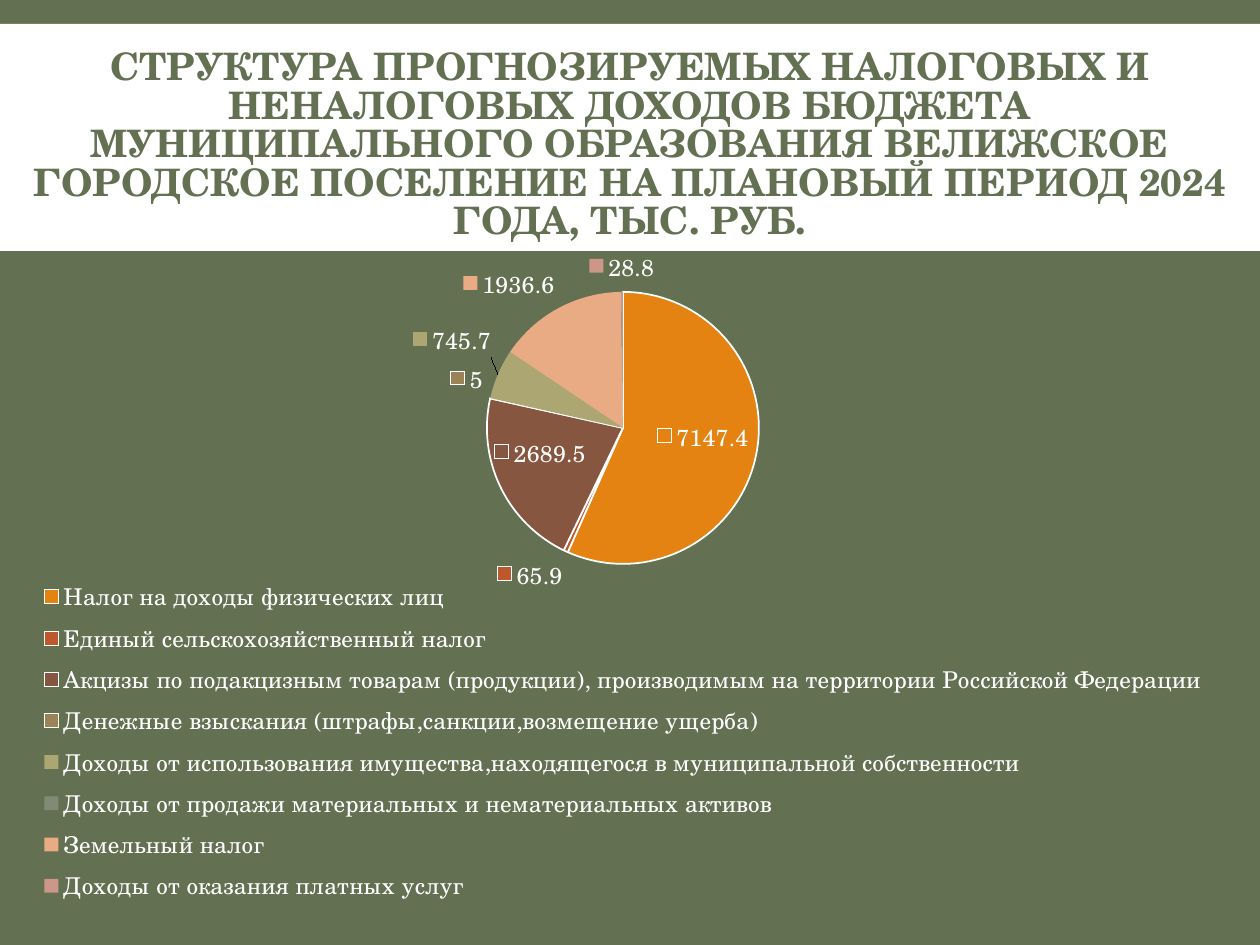
from lxml import etree
from pptx import Presentation
from pptx.chart.data import CategoryChartData
from pptx.dml.color import RGBColor
from pptx.enum.chart import XL_CHART_TYPE, XL_LABEL_POSITION, XL_LEGEND_POSITION
from pptx.enum.shapes import MSO_SHAPE
from pptx.enum.text import MSO_ANCHOR, PP_ALIGN
from pptx.oxml.ns import qn
from pptx.util import Pt

PIE = XL_CHART_TYPE.PIE
INSIDE = XL_LABEL_POSITION.INSIDE_END
OUTSIDE = XL_LABEL_POSITION.OUTSIDE_END
BOTTOM = XL_LEGEND_POSITION.BOTTOM
RECT = MSO_SHAPE.RECTANGLE
MIDDLE = MSO_ANCHOR.MIDDLE
CENTER = PP_ALIGN.CENTER
SCALE = 914400 // 126
GREEN, WHITE = "637052", "FFFFFF"
SMALL = 13.2
TITLE = (
    "СТРУКТУРА ПРОГНОЗИРУЕМЫХ НАЛОГОВЫХ И НЕНАЛОГОВЫХ ДОХОДОВ БЮДЖЕТА "
    "МУНИЦИПАЛЬНОГО ОБРАЗОВАНИЯ ВЕЛИЖСКОЕ ГОРОДСКОЕ ПОСЕЛЕНИЕ "
    "НА ПЛАНОВЫЙ ПЕРИОД 2024 ГОДА, ТЫС. РУБ."
)
INCOME = [
    ("Налог на доходы физических лиц", 7147.4, "E48312"),
    ("Единый сельскохозяйственный налог", 65.9, "BD582C"),
    ("Акцизы по подакцизным товарам (продукции), производимым на "
     "территории Российской Федерации", 2689.5, "865640"),
    ("Денежные взыскания (штрафы,санкции,возмещение ущерба)", 5, "9B8357"),
    ("Доходы от использования имущества,находящегося в муниципальной "
     "собственности", 745.7, "ABA672"),
    ("Доходы от продажи материальных и нематериальных активов", 0, "7F8B74"),
    ("Земельный налог", 1936.6, "E9AB84"),
    ("Доходы от оказания платных услуг", 28.8, "CC9689"),
]
SHIFTS = {2: (-0.01, -0.02), 4: (0, -0.02)}
OUTLINED = 4
LARGE = 2000


def color(code):
    """Turn a hex string into a colour."""
    return RGBColor.from_string(code)


def place(parent, after, items):
    """Give a chart part a manual layout in fractions of the chart."""
    for old in parent.findall(qn("c:layout")):
        parent.remove(old)
    layout = etree.Element(qn("c:layout"))
    manual = etree.SubElement(layout, qn("c:manualLayout"))
    for tag, val in items:
        etree.SubElement(manual, qn(f"c:{tag}")).set("val", str(val))
    if after is None:
        parent.insert(0, layout)
    else:
        after.addnext(layout)


def edges(*box):
    """List the layout items of a box measured from the chart's edge."""
    return [("xMode", "edge"), ("yMode", "edge"), *zip("xywh", box)]


class Deck:
    """Hold the style and the current slide."""

    def __init__(self, face):
        """Start a one-slide deck with a plain background."""
        self.face = face
        self.deck = Presentation()
        self.deck.slide_width = 1260 * SCALE
        self.deck.slide_height = 945 * SCALE
        self.slide = self.deck.slides.add_slide(self.deck.slide_layouts[6])
        fill = self.slide.background.fill
        fill.solid()
        fill.fore_color.rgb = color(GREEN)

    def style(self, font, size, code, bold=False):
        """Set the look of a font."""
        font.name, font.size, font.bold = self.face, Pt(size), bold
        font.color.rgb = color(code)

    def band(self, *box):
        """Draw a white band."""
        shape = self.slide.shapes.add_shape(RECT, *(n * SCALE for n in box))
        shape.shadow.inherit = False
        shape.fill.solid()
        shape.fill.fore_color.rgb = color(WHITE)
        shape.line.fill.background()

    def title(self, text, *box):
        """Write the centred heading."""
        frame = self.slide.shapes.add_textbox(*(n * SCALE for n in box)).text_frame
        frame.word_wrap = True
        frame.vertical_anchor = MIDDLE
        frame.text = text
        par = frame.paragraphs[0]
        par.alignment, par.line_spacing = CENTER, 0.85
        self.style(par.runs[0].font, 21.6, GREEN, True)

    def pie(self, rows, *box):
        """Draw the pie with value labels and a legend below."""
        data = CategoryChartData()
        data.categories = [row[0] for row in rows]
        data.add_series("Series 1", [row[1] for row in rows])
        chart = self.slide.shapes.add_chart(
            PIE, *(n * SCALE for n in box), data).chart
        chart.has_title = False
        self.style(chart.font, SMALL, WHITE)
        chart.has_legend = True
        legend = chart.legend
        legend.position, legend.include_in_layout = BOTTOM, False
        self.style(legend.font, SMALL, WHITE)
        node = legend._element
        place(node, node.find(qn("c:legendPos")), edges(0.01, 0.49, 0.98, 0.5))
        plot = chart.plots[0]
        plot.vary_by_categories = True
        place(chart._chartSpace.chart.plotArea, None,
              [("layoutTarget", "inner"), *edges(0, 0.074, 1, 0.403)])
        for i, (_, value, code) in enumerate(rows):
            point = plot.series[0].points[i]
            self.slice(point, code, i < OUTLINED)
            if value:
                self.label(point, value, SHIFTS.get(i))

    def slice(self, point, code, edge):
        """Colour one slice."""
        look = point.format
        look.fill.solid()
        look.fill.fore_color.rgb = color(code)
        if edge:
            look.line.color.rgb = color(WHITE)
            look.line.width = Pt(1)
        else:
            look.line.fill.background()

    def label(self, point, value, shift):
        """Show a slice's value beside its legend key."""
        label = point.data_label
        self.style(label.font, SMALL, WHITE)
        label.position = INSIDE if value > LARGE else OUTSIDE
        node = label._dLbl
        node.find(qn("c:showLegendKey")).set("val", "1")
        if shift:
            place(node, node.find(qn("c:idx")), zip("xy", shift))


def main():
    """Build and save the slide."""
    deck = Deck("TeX Gyre Schola")
    deck.band(0, 24, 1260, 227)
    deck.title(TITLE, 0, 73, 1260, 146)
    deck.pie(INCOME, 2, 242, 1242, 675)
    deck.deck.save("out.pptx")


if __name__ == "__main__":
    main()
